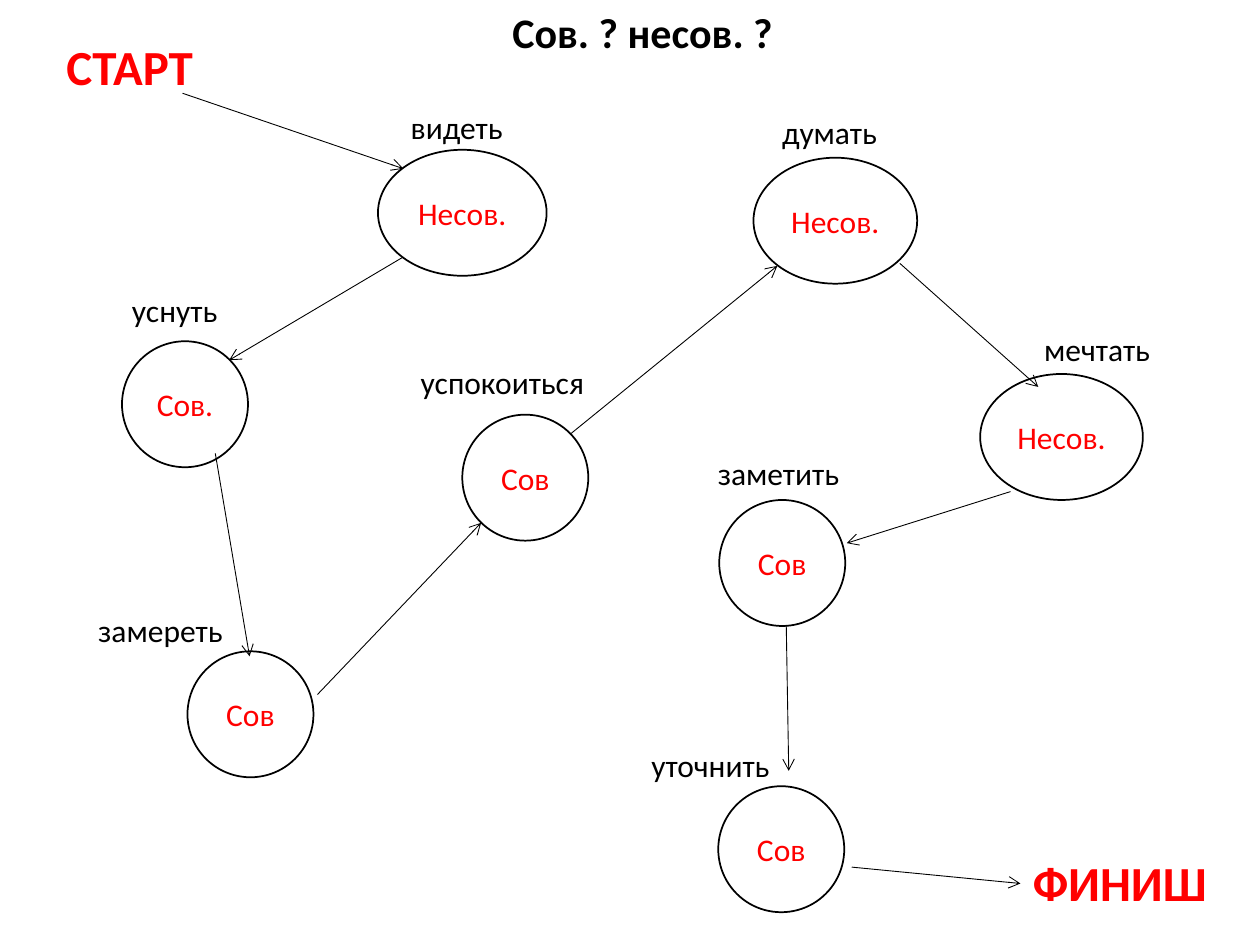
from pptx import Presentation
from pptx.dml.color import RGBColor
from pptx.enum.shapes import MSO_CONNECTOR, MSO_SHAPE
from pptx.enum.text import MSO_ANCHOR, MSO_AUTO_SIZE, PP_ALIGN
from pptx.oxml.ns import qn
from pptx.util import Cm, Pt
from lxml.etree import SubElement

COLORS = {"paper": "FFFFFF", "ink": "000000", "accent": "FF0000"}


def write(shape, words, size, color, bold=False, align=PP_ALIGN.LEFT):
    paragraph = shape.text_frame.paragraphs[0]
    paragraph.text = words
    paragraph.alignment = align
    paragraph.font.name = "Calibri"
    paragraph.font.size = Pt(size)
    paragraph.font.bold = bold
    paragraph.font.color.rgb = RGBColor.from_string(COLORS[color])


def add_label(words, left, top, width, height, size, color,
              bold=False, align=PP_ALIGN.LEFT, wrap=False):
    label = slide.shapes.add_textbox(Cm(left), Cm(top), Cm(width), Cm(height))
    label.text_frame.word_wrap = wrap
    label.text_frame.auto_size = MSO_AUTO_SIZE.SHAPE_TO_FIT_TEXT
    write(label, words, size, color, bold, align)


deck = Presentation()
deck.slide_width, deck.slide_height = Cm(25.4), Cm(19.05)
slide = deck.slides.add_slide(deck.slide_layouts[6])

# Verbs along the route: word, label (left, top, width), aspect, oval (left, top, width)
verbs = [
    ("видеть", (8.03, 2.06, 2.39), "Несов.", (7.62, 3.02, 3.4)),
    ("уснуть", (2.41, 5.74, 2.26), "Сов.", (2.46, 6.88, 2.54)),
    ("замереть", (1.73, 12.19, 3.05), "Сов", (3.78, 13.13, 2.54)),
    ("успокоиться", (8.23, 7.19, 4.06), "Сов", (9.32, 8.36, 2.54)),
    ("думать", (15.52, 2.16, 2.44), "Несов.", (15.19, 3.18, 3.3)),
    ("мечтать", (20.8, 6.53, 2.67), "Несов.", (19.76, 7.54, 3.28)),
    ("заметить", (14.22, 9.02, 3), "Сов", (14.5, 10.08, 2.54)),
    ("уточнить", (12.88, 14.91, 2.92), "Сов", (14.48, 15.85, 2.54)),
]

# Ovals with the aspect of each verb
for _, _, aspect, (left, top, width) in verbs:
    oval = slide.shapes.add_shape(MSO_SHAPE.OVAL, Cm(left), Cm(top), Cm(width), Cm(2.54))
    oval.shadow.inherit = False
    oval.fill.solid()
    oval.fill.fore_color.rgb = RGBColor.from_string(COLORS["paper"])
    oval.line.color.rgb = RGBColor.from_string(COLORS["ink"])
    oval.line.width = Pt(1)
    oval.text_frame.vertical_anchor = MSO_ANCHOR.MIDDLE
    write(oval, aspect, 18, "accent", align=PP_ALIGN.CENTER)

# Arrows from start to finish
route = [
    (3.68, 1.88, 8.13, 3.4),
    (8.13, 5.18, 4.62, 7.26),
    (4.34, 9.14, 5.03, 13.23),
    (6.4, 14, 9.7, 10.54),
    (11.51, 8.74, 15.67, 5.36),
    (18.14, 5.31, 20.93, 7.8),
    (20.37, 9.91, 17.07, 10.95),
    (15.85, 12.6, 15.9, 15.54),
    (17.17, 17.48, 20.57, 17.81),
]
for ends in route:
    arrow = slide.shapes.add_connector(MSO_CONNECTOR.STRAIGHT, *map(Cm, ends))
    arrow.line.color.rgb = RGBColor.from_string(COLORS["ink"])
    arrow.line.width = Pt(0.5)
    SubElement(arrow.line._get_or_add_ln(), qn("a:tailEnd"), type="arrow")
    SubElement(arrow._element.spPr, qn("a:effectLst"))

# Verb labels; the longest one keeps its box width
for verb, (left, top, width), _, _ in verbs:
    add_label(verb, left, top, width, 1.02, 18, "ink", wrap=verb == "успокоиться")

# Title, start and finish
add_label("Сов. ? несов. ?", 10.08, 0, 5.82, 1.27, 24, "ink", bold=True)
add_label("СТАРТ", 0.53, 0.61, 4.17, 1.45, 28, "accent",
          bold=True, align=PP_ALIGN.CENTER, wrap=True)
add_label("ФИНИШ", 20.57, 17.07, 4.06, 1.45, 28, "accent", bold=True)

deck.save("out.pptx")
